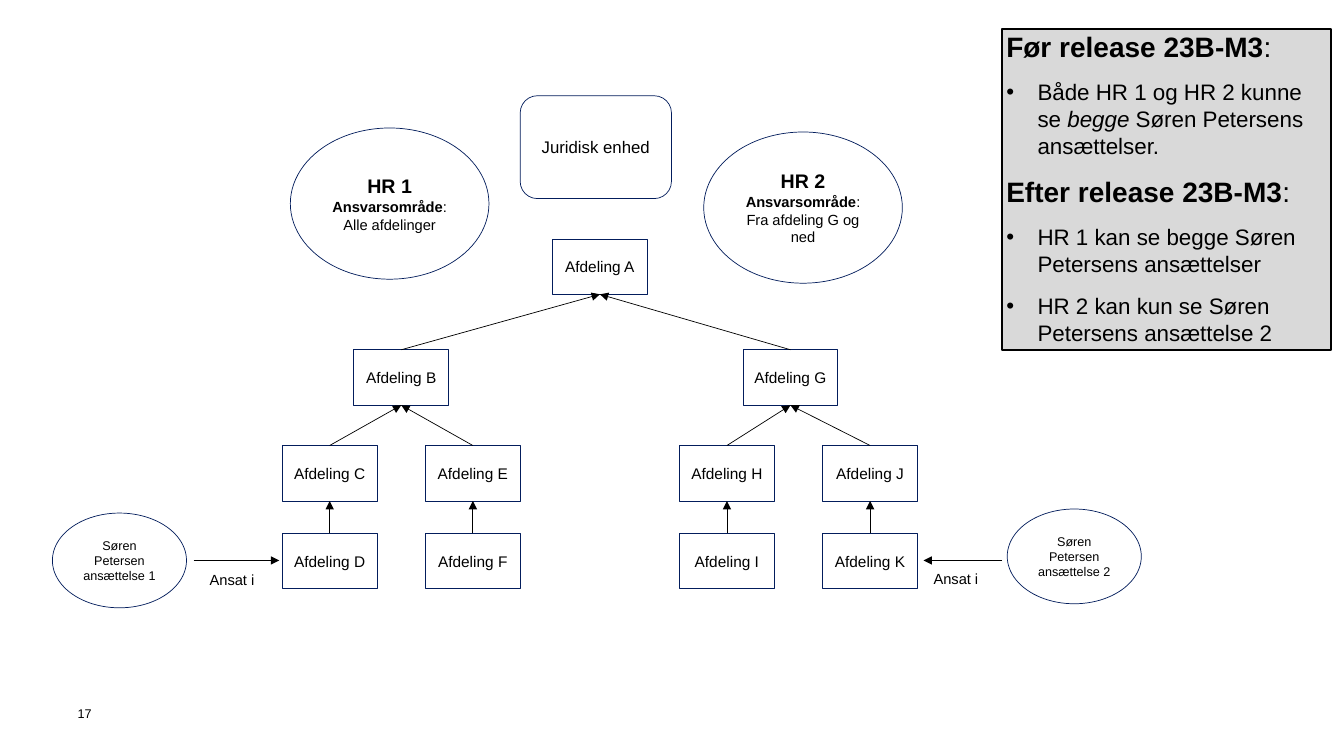
from lxml import etree
from pptx import Presentation
from pptx.dml.color import RGBColor
from pptx.enum.shapes import MSO_CONNECTOR, MSO_SHAPE
from pptx.enum.text import MSO_ANCHOR, MSO_AUTO_SIZE, PP_ALIGN
from pptx.oxml.ns import qn
from pptx.util import Emu, Pt

RECTANGLE = MSO_SHAPE.RECTANGLE
ROUNDED = MSO_SHAPE.ROUNDED_RECTANGLE
OVAL = MSO_SHAPE.OVAL
STRAIGHT = MSO_CONNECTOR.STRAIGHT
MIDDLE = MSO_ANCHOR.MIDDLE
TOP = MSO_ANCHOR.TOP
CENTER = PP_ALIGN.CENTER
LEFT = PP_ALIGN.LEFT
NO_FIT = MSO_AUTO_SIZE.NONE

EMU_PER_PX = 9144
FONT = "Arial"
COLORS = {"text": "000000", "navy": "031D5C", "white": "FFFFFF", "panel": "D9D9D9"}
TOP_SIDE, BOTTOM_SIDE = 0, 2

BOX_WIDTH, BOX_HEIGHT = 94, 55
ROWS = [237, 347, 442, 529]
DEPARTMENTS = {
    "A": (548, 0, None),
    "B": (351, 1, "A"),
    "C": (280, 2, "B"),
    "E": (422, 2, "B"),
    "D": (280, 3, "C"),
    "F": (422, 3, "E"),
    "G": (737, 1, "A"),
    "H": (674, 2, "G"),
    "J": (816, 2, "G"),
    "I": (674, 3, "H"),
    "K": (816, 3, "J"),
}
MANAGERS = [
    ("HR 1", "Alle afdelinger", 288, 127),
    ("HR 2", "Fra afdeling G og ned", 698, 131),
]
EMPLOYMENTS = [
    ("1", 52, 509, (192, 277), (208, 566)),
    ("2", 999, 505, (994, 916), (926, 565)),
]
PANEL = [
    (False, [("Før release 23B-M3", {"bold": True}), (":", {})]),
    (True, [("Både HR 1 og HR 2 kunne se ", {}), ("begge", {"italic": True}),
            (" Søren Petersens ansættelser.", {})]),
    (False, [("Efter release 23B-M3", {"bold": True}), (":", {})]),
    (True, [("HR 1 kan se begge Søren Petersens ansættelser", {})]),
    (True, [("HR 2 kan kun se Søren Petersens ansættelse 2", {})]),
]


def px(value):
    return Emu(value * EMU_PER_PX)


def color(name):
    return RGBColor.from_string(COLORS[name])


def set_attributes(target, values):
    for name, value in values.items():
        setattr(target, name, value)


def add_run(paragraph, text, size, style):
    run = paragraph.add_run()
    run.text = text
    set_attributes(run.font, {"name": FONT, "size": Pt(size), **style})
    run.font.color.rgb = color("text")


def set_outline(shape, fill, line, width):
    shape.fill.solid()
    shape.fill.fore_color.rgb = color(fill)
    shape.line.color.rgb = color(line)
    shape.line.width = Pt(width)


def clear_margins(frame):
    set_attributes(frame, {
        "margin_left": 0, "margin_right": 0, "margin_top": 0, "margin_bottom": 0,
        "word_wrap": True, "auto_size": NO_FIT, "vertical_anchor": TOP,
    })


def add_node(slide, kind, left, top, width, height, text="", size=11):
    shape = slide.shapes.add_shape(kind, px(left), px(top), px(width), px(height))
    shape.shadow.inherit = False
    set_outline(shape, "white", "navy", 0.5)
    set_attributes(shape.text_frame, {"word_wrap": True, "vertical_anchor": MIDDLE})
    paragraph = shape.text_frame.paragraphs[0]
    paragraph.alignment = CENTER
    if text:
        add_run(paragraph, text, size, {})
    return shape


def add_manager(slide, name, area, left, top):
    paragraph = add_node(slide, OVAL, left, top, 197, 150).text_frame.paragraphs[0]
    add_run(paragraph, name, 14, {"bold": True})
    paragraph.add_line_break()
    add_run(paragraph, "Ansvarsområde", 10.5, {"bold": True})
    add_run(paragraph, ": " + area, 10.5, {})


def add_label(slide, text, left, top, width, height, size):
    frame = slide.shapes.add_textbox(px(left), px(top), px(width), px(height)).text_frame
    clear_margins(frame)
    add_run(frame.paragraphs[0], text, size, {})


def add_arrow(slide, start_x, start_y, end_x, end_y):
    arrow = slide.shapes.add_connector(
        STRAIGHT, px(start_x), px(start_y), px(end_x), px(end_y))
    arrow.line.color.rgb = color("text")
    arrow.line.width = Pt(0.5)
    outline = arrow.line._get_or_add_ln()
    etree.SubElement(outline, qn("a:tailEnd"), type="triangle")
    etree.SubElement(outline.getparent(), qn("a:effectLst"))
    return arrow


def add_departments(slide):
    boxes = {
        name: add_node(slide, RECTANGLE, left, ROWS[row], BOX_WIDTH, BOX_HEIGHT,
                       "Afdeling " + name)
        for name, (left, row, parent) in DEPARTMENTS.items()
    }
    for name, (left, row, parent) in DEPARTMENTS.items():
        if parent:
            arrow = add_arrow(slide, 0, 0, 0, 0)
            arrow.begin_connect(boxes[name], TOP_SIDE)
            arrow.end_connect(boxes[parent], BOTTOM_SIDE)


def add_employment(slide, number, left, top, arrow_span, label_position):
    add_node(slide, OVAL, left, top, 133, 94, "Søren Petersen ansættelse " + number, 9)
    start, end = arrow_span
    add_arrow(slide, start, 556, end, 556)
    add_label(slide, "Ansat i", *label_position, 58, 18, 10.5)


def set_bullet(paragraph, bulleted):
    properties = paragraph._p.get_or_add_pPr()
    margin, indent = (35, -31) if bulleted else (4, 0)
    properties.set("marL", str(px(margin)))
    properties.set("indent", str(px(indent)))
    if bulleted:
        etree.SubElement(properties, qn("a:buFont"), typeface=FONT)
        etree.SubElement(properties, qn("a:buChar"), char="•")
    else:
        etree.SubElement(properties, qn("a:buNone"))


def fill_panel(panel):
    set_attributes(panel, {"left": px(994), "top": px(29),
                           "width": px(326), "height": px(318)})
    set_outline(panel, "panel", "text", 1.5)
    frame = panel.text_frame
    clear_margins(frame)
    for index, (bulleted, runs) in enumerate(PANEL):
        paragraph = frame.add_paragraph() if index else frame.paragraphs[0]
        set_bullet(paragraph, bulleted)
        set_attributes(paragraph, {"space_before": Pt(11 if index else 0),
                                   "alignment": LEFT})
        for text, style in runs:
            add_run(paragraph, text, 16 if bulleted else 20, style)


def main():
    presentation = Presentation()
    presentation.slide_width = px(1333)
    presentation.slide_height = px(750)
    slide = presentation.slides.add_slide(presentation.slide_layouts[1])
    title = slide.shapes.title.element
    title.getparent().remove(title)
    fill_panel(slide.placeholders[1])
    add_departments(slide)
    add_node(slide, ROUNDED, 516, 95, 150, 102, "Juridisk enhed", 12)
    for manager in MANAGERS:
        add_manager(slide, *manager)
    for employment in EMPLOYMENTS:
        add_employment(slide, *employment)
    add_label(slide, "17", 77, 700, 31, 30, 9)
    presentation.save("out.pptx")


if __name__ == "__main__":
    main()
